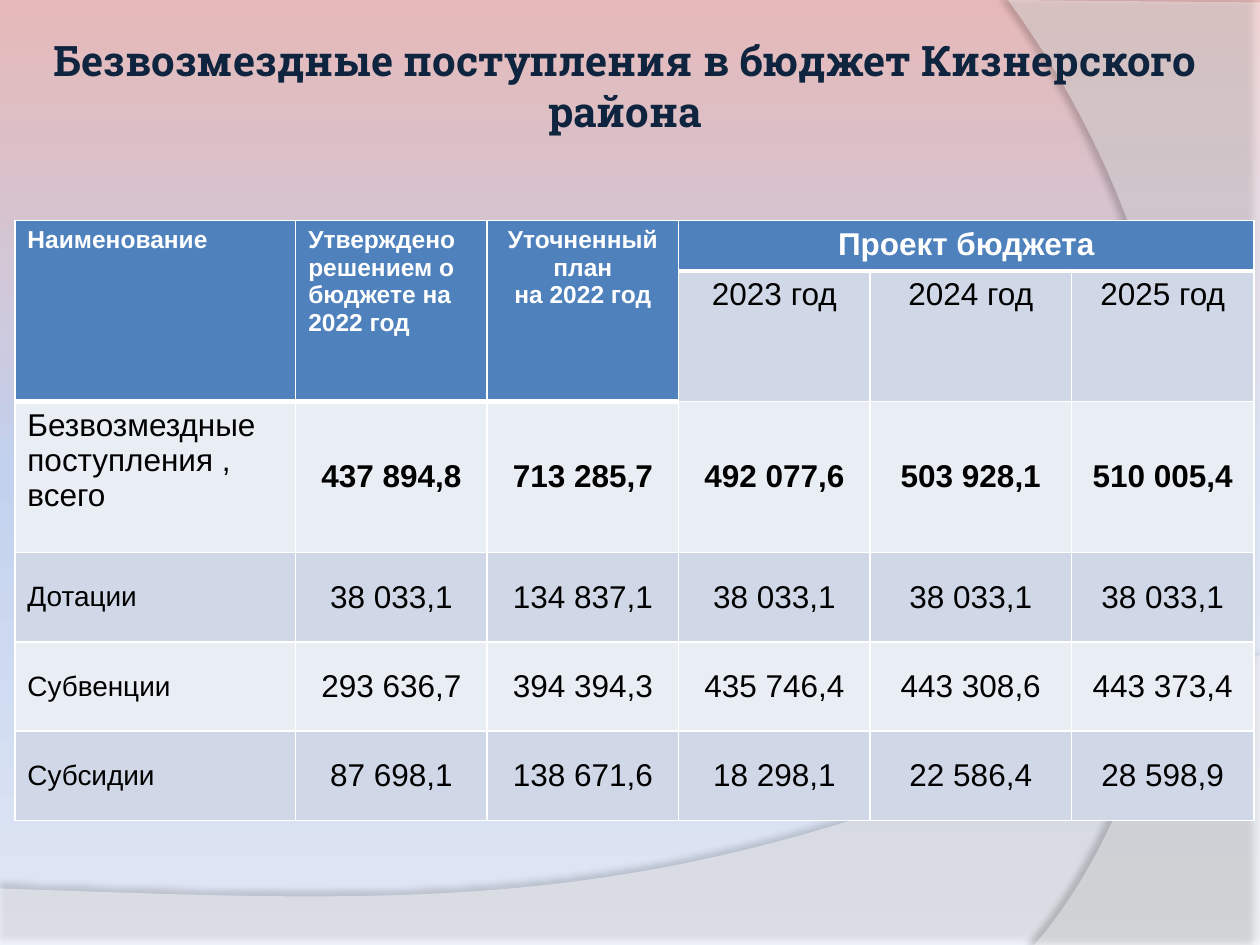
from dataclasses import dataclass

from lxml.etree import SubElement
from pptx import Presentation
from pptx.dml.color import RGBColor
from pptx.enum.text import MSO_ANCHOR as Anchor, MSO_AUTO_SIZE as AutoSize, PP_ALIGN as Align
from pptx.oxml import parse_xml
from pptx.oxml.ns import nsdecls, qn
from pptx.util import Cm, Pt

COLORS = {
    "title": "0F243E", "white": "FFFFFF", "black": "000000",
    "head": "4F81BD", "band": "D0D8E8", "light": "E9EDF4",
}
BACKGROUND = [(0, "E6B9B8"), (50, "C2D1ED"), (100, "E1E8F5")]
Point = tuple[float, float]


@dataclass
class Wave:
    """Curved panel in cm: straight corners, then a Bezier edge back to the start."""
    corners: list[Point]
    controls: list[Point]
    end: Point
    opacity: int
    shadow_opacity: int
    shadow_dist: float
    shadow_angle: int


@dataclass
class Entry:
    """Text and look of one table cell."""
    text: str
    fill: str
    size: int = 18
    bold: bool = False
    color: str = "black"
    align: Align = Align.CENTER
    anchor: Anchor = Anchor.MIDDLE


WAVES = [
    Wave([(0, 17.91), (0, 19.07), (25.4, 19.07), (25.4, 13.21)],
         [(14.2, 18.52), (9.93, 18.26)], (0, 17.91), 45, 35, 3.5, 270),
    Wave([(25.4, 0.05), (25.4, 19.05), (20.85, 19.05)],
         [(23.75, 15.72), (25.86, 7.62)], (20.32, 0), 40, 45, 4, 180),
]

COL_WIDTHS = [5.66, 3.86, 3.86, 3.86, 4.06, 3.68]
ROW_HEIGHTS = [1.02, 2.63, 3.05, 1.8, 1.8, 1.8]
HEADERS = [
    ("Наименование", Align.LEFT),
    ("Утверждено решением о бюджете на 2022 год", Align.LEFT),
    ("Уточненный план\nна 2022 год", Align.CENTER),
]
YEARS = ["2023 год", "2024 год", "2025 год"]
DATA = [
    ("Безвозмездные поступления , всего",
     "437 894,8", "713 285,7", "492 077,6", "503 928,1", "510 005,4"),
    ("Дотации", "38 033,1", "134 837,1", "38 033,1", "38 033,1", "38 033,1"),
    ("Субвенции", "293 636,7", "394 394,3", "435 746,4", "443 308,6", "443 373,4"),
    ("Субсидии", "87 698,1", "138 671,6", "18 298,1", "22 586,4", "28 598,9"),
]


def rgb(name: str) -> RGBColor:
    return RGBColor.from_string(COLORS[name])


def add_alpha(clr, percent: int) -> None:
    SubElement(clr, qn("a:alpha")).set("val", str(percent * 1000))


def set_background(s) -> None:
    fill = s.background.fill
    fill.gradient()
    fill.gradient_angle = 270
    stops = s.background._cSld.find(".//" + qn("a:gsLst"))
    for old in list(stops):
        stops.remove(old)
    for pos, color in BACKGROUND:
        gs = SubElement(stops, qn("a:gs"), pos=str(pos * 1000))
        SubElement(gs, qn("a:srgbClr"), val=color)


def bezier(p0: Point, p1: Point, p2: Point, p3: Point, steps: int = 60) -> list[Point]:
    def at(t: float) -> Point:
        u = 1 - t
        weights = (u ** 3, 3 * u * u * t, 3 * u * t * t, t ** 3)
        x, y = (sum(w * v for w, v in zip(weights, axis)) for axis in zip(p0, p1, p2, p3))
        return x, y
    return [at(i / steps) for i in range(1, steps + 1)]


def add_wave(s, wave: Wave) -> None:
    points = wave.corners + bezier(wave.corners[-1], *wave.controls, wave.end)
    start, *rest = [(Cm(x), Cm(y)) for x, y in points]
    builder = s.shapes.build_freeform(*start)
    builder.add_line_segments(rest, close=True)
    sp = builder.convert_to_shape()
    sp.fill.solid()
    sp.fill.fore_color.rgb = rgb("white")
    sp.line.fill.background()
    pr = sp._element.spPr
    add_alpha(pr.find(".//" + qn("a:solidFill"))[0], wave.opacity)
    # Soft outer shadow along the curve
    effects = SubElement(pr, qn("a:effectLst"))
    shadow = SubElement(effects, qn("a:outerShdw"), blurRad=str(Pt(4)),
                        dist=str(Pt(wave.shadow_dist)),
                        dir=str(wave.shadow_angle * 60000), rotWithShape="0")
    add_alpha(SubElement(shadow, qn("a:srgbClr"), val=COLORS["black"]), wave.shadow_opacity)


def write(tf, text: str, align: Align, color: str, **fmt) -> None:
    for i, line in enumerate(text.split("\n")):
        p = tf.add_paragraph() if i else tf.paragraphs[0]
        p.alignment = align
        r = p.add_run()
        r.text = line
        r.font.color.rgb = rgb(color)
        for name, value in fmt.items():
            setattr(r.font, name, value)


def add_title(s) -> None:
    box = s.shapes.add_textbox(Cm(0.5), Cm(0.58), Cm(24.2), Cm(2.31))
    tf = box.text_frame
    for name, value in {"word_wrap": True, "auto_size": AutoSize.SHAPE_TO_FIT_TEXT}.items():
        setattr(tf, name, value)
    write(tf, "Безвозмездные поступления в бюджет Кизнерского района",
          Align.CENTER, "title", name="Roboto Slab", size=Pt(24), bold=True)


def set_borders(cell, top: float, bottom: float) -> None:
    pr = cell._tc.get_or_add_tcPr()
    for i, (side, width) in enumerate({"L": 1, "R": 1, "T": top, "B": bottom}.items()):
        pr.insert(i, parse_xml(
            f'<a:ln{side} {nsdecls("a")} w="{Pt(width)}"><a:solidFill>'
            f'<a:srgbClr val="{COLORS["white"]}"/></a:solidFill></a:ln{side}>'))


def table_entries() -> dict[tuple[int, int], Entry]:
    head = {"fill": "head", "bold": True, "color": "white", "anchor": Anchor.TOP}
    entries = {(0, c): Entry(text, size=14, align=align, **head)
               for c, (text, align) in enumerate(HEADERS)}
    entries[0, 3] = Entry("Проект бюджета", **head)
    for c, year in enumerate(YEARS, 3):
        entries[1, c] = Entry(year, "band", anchor=Anchor.TOP)
    for r, (label, *values) in enumerate(DATA, 2):
        total = r == 2
        fill = "band" if r % 2 else "light"
        entries[r, 0] = Entry(label, fill, 18 if total else 16, align=Align.LEFT,
                              anchor=Anchor.TOP if total else Anchor.MIDDLE)
        for c, value in enumerate(values, 1):
            entries[r, c] = Entry(value, fill, bold=total)
    return entries


def add_budget_table(s) -> None:
    rows, cols = len(ROW_HEIGHTS), len(COL_WIDTHS)
    table = s.shapes.add_table(rows, cols, Cm(0.3), Cm(4.44),
                               Cm(sum(COL_WIDTHS)), Cm(sum(ROW_HEIGHTS))).table
    for col, width in zip(table.columns, COL_WIDTHS):
        col.width = Cm(width)
    for row, height in zip(table.rows, ROW_HEIGHTS):
        row.height = Cm(height)
    # Merged headers
    for c in range(3):
        table.cell(0, c).merge(table.cell(1, c))
    table.cell(0, 3).merge(table.cell(0, 5))
    # Texts and fills
    for (r, c), entry in table_entries().items():
        cell = table.cell(r, c)
        cell.fill.solid()
        cell.fill.fore_color.rgb = rgb(entry.fill)
        cell.vertical_anchor = entry.anchor
        write(cell.text_frame, entry.text, entry.align, entry.color,
              name="Arial", size=Pt(entry.size), bold=entry.bold)
    # White grid with a heavier line under the header cells
    for r in range(rows):
        for c in range(cols):
            head_end = 1 if c < 3 else 0
            set_borders(table.cell(r, c), top=3 if r == head_end + 1 else 1,
                        bottom=3 if r <= head_end else 1)


def main() -> None:
    prs = Presentation()
    prs.slide_width, prs.slide_height = Cm(25.4), Cm(19.05)
    s = prs.slides.add_slide(prs.slide_layouts[6])
    set_background(s)
    for wave in WAVES:
        add_wave(s, wave)
    add_title(s)
    add_budget_table(s)
    prs.save("out.pptx")


if __name__ == "__main__":
    main()
